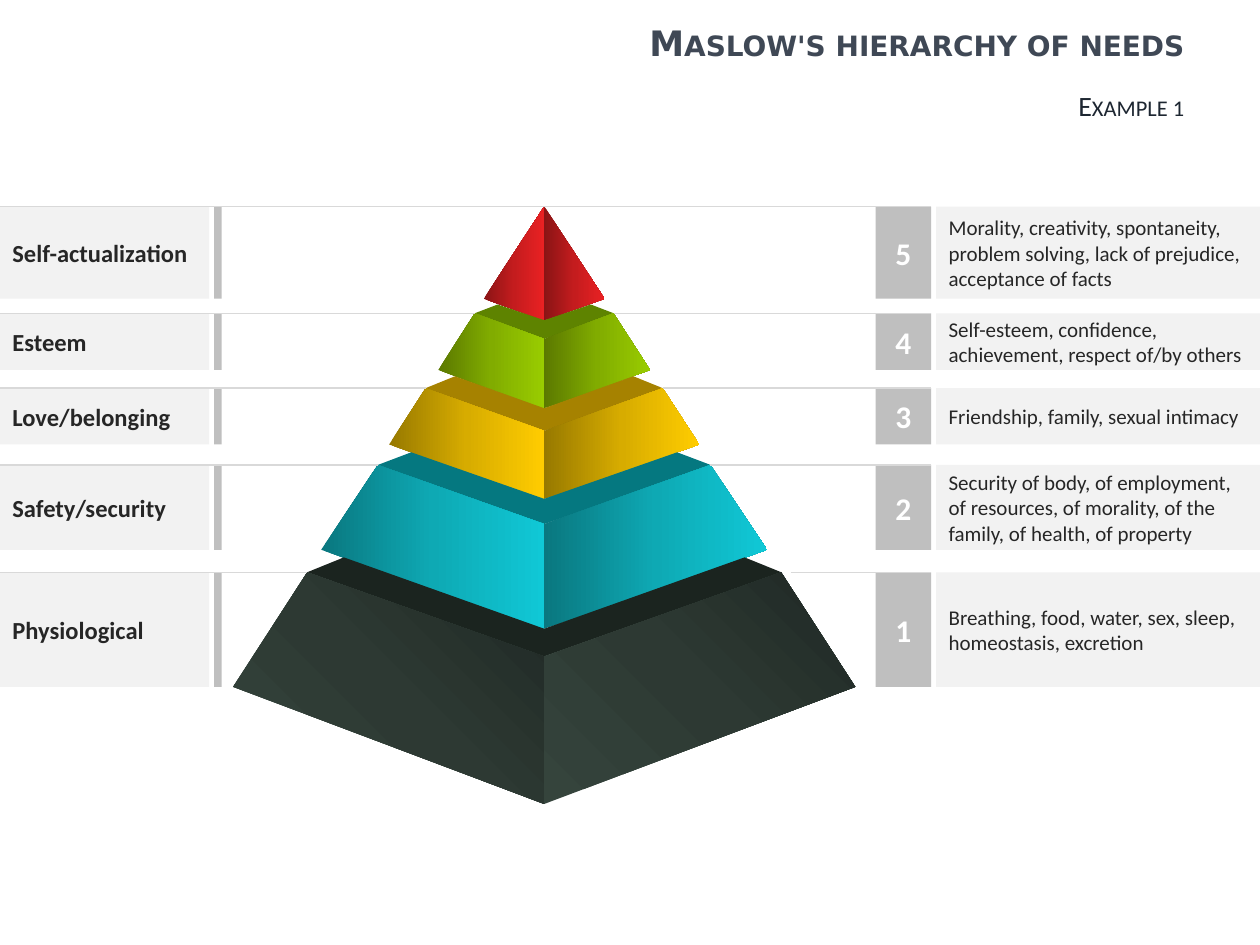
from lxml.etree import SubElement
from pptx import Presentation
from pptx.dml.color import RGBColor
from pptx.enum.shapes import MSO_CONNECTOR as Connector, MSO_SHAPE as Shape
from pptx.enum.text import MSO_ANCHOR as Anchor, MSO_AUTO_SIZE as AutoSize, PP_ALIGN as Align
from pptx.oxml import parse_xml
from pptx.oxml.ns import nsdecls, qn
from pptx.util import Pt

PANEL = RGBColor(0xF2, 0xF2, 0xF2)
ACCENT = RGBColor(0xBF, 0xBF, 0xBF)
RULE = RGBColor(0xD9, 0xD9, 0xD9)
INK = RGBColor(0x26, 0x26, 0x26)
WHITE = RGBColor(0xFF, 0xFF, 0xFF)
TITLE = RGBColor(0x3F, 0x48, 0x55)
SUBTITLE = RGBColor(0x1D, 0x26, 0x31)

RED = [RGBColor(0x8A, 0x14, 0x15), RGBColor(0xC4, 0x1C, 0x1E), RGBColor(0xE9, 0x21, 0x23)]
GREEN = [RGBColor(0x5B, 0x79, 0x00), RGBColor(0x81, 0xAC, 0x00), RGBColor(0x99, 0xCC, 0x00)]
YELLOW = [RGBColor(0x97, 0x79, 0x00), RGBColor(0xD7, 0xAC, 0x00), RGBColor(0xFF, 0xCC, 0x00)]
TEAL = [RGBColor(0x0A, 0x77, 0x7F), RGBColor(0x0E, 0xA9, 0xB4), RGBColor(0x10, 0xC8, 0xD6)]
SLATE = [RGBColor(0x35, 0x44, 0x3C), RGBColor(0x2D, 0x39, 0x33), RGBColor(0x1F, 0x28, 0x24)]
GREEN_LID = RGBColor(0x5E, 0x83, 0x00)
YELLOW_LID = RGBColor(0xA6, 0x82, 0x00)
TEAL_LID = RGBColor(0x05, 0x78, 0x80)
SLATE_LID = RGBColor(0x1B, 0x24, 0x1F)

CENTER = 311
LABEL_FORMAT = {"name": "Calibri", "size": Pt(14), "bold": True}
NUMBER_FORMAT = {"name": "Calibri", "size": Pt(18), "bold": True}
DETAIL_FORMAT = {"name": "Calibri", "size": Pt(12), "bold": False}

# name, details, upper corner, lower corner, front edge, lid corner, lid colour, face colours, angle
TIERS = [
    ("Self-actualization",
     "Morality, creativity, spontaneity, problem solving, lack of prejudice, acceptance of facts",
     (0, 118), (34.5, 170.7), (118, 183), None, None, RED, 0),
    ("Esteem", "Self-esteem, confidence, achievement, respect of/by others",
     (39.6, 179), (60.5, 211.4), (193.7, 233.3), (26.6, 174), GREEN_LID, GREEN, 0),
    ("Love/belonging", "Friendship, family, sexual intimacy",
     (67.7, 221.8), (88.6, 254), (246.2, 285.1), (51, 215), YELLOW_LID, YELLOW, 0),
    ("Safety/security",
     "Security of body, of employment, of resources, of morality, of the family, of health, of property",
     (95, 265.7), (127.4, 314.2), (299.5, 359.3), (76, 258.5), TEAL_LID, TEAL, 0),
    ("Physiological", "Breathing, food, water, sex, sleep, homeostasis, excretion",
     (135.4, 327), (177.8, 392.5), (375.1, 459.4), (114.5, 318.5), SLATE_LID, SLATE, 315),
]


def add_facet(group, side, corners):
    points = [(Pt(CENTER + side * x), Pt(y)) for x, y in corners]
    builder = group.shapes.build_freeform(*points[0], scale=1.0)
    builder.add_line_segments(points[1:], close=True)
    facet = builder.convert_to_shape()
    facet.shadow.inherit = False
    facet.line.fill.background()
    return facet


def add_panel(slide, left, width, top, bottom, color):
    panel = slide.shapes.add_shape(Shape.RECTANGLE, Pt(left), Pt(top), Pt(width), Pt(bottom - top))
    panel.shadow.inherit = False
    panel.fill.solid()
    panel.fill.fore_color.rgb = color
    panel.line.fill.background()
    return panel


deck = Presentation()
deck.slide_width, deck.slide_height = Pt(720), Pt(540)
page = deck.slides.add_slide(deck.slide_layouts[0])

headings = [
    (page.shapes.title, "Maslow's hierarchy of needs", 0, 49, TITLE,
     {"name": "DejaVu Sans", "size": Pt(20), "bold": True}),
    (page.placeholders[1], "Example 1", 49, 22.3, SUBTITLE,
     {"name": "Calibri", "size": Pt(16), "bold": False}),
]
for box, words, top, height, color, values in headings:
    box.left, box.top, box.width, box.height = Pt(229.7), Pt(top), Pt(454.3), Pt(height)
    frame = box.text_frame
    frame.auto_size = AutoSize.NONE
    frame.vertical_anchor = Anchor.MIDDLE
    para = frame.paragraphs[0]
    para.alignment = Align.RIGHT
    para.space_before = Pt(0)
    span = para.add_run()
    span.text = words
    for key, value in values.items():
        setattr(span.font, key, value)
    span.font.color.rgb = color
    span.font._element.set("cap", "small")

pyramid = page.shapes.add_group_shape()
back = 0
for name, details, upper, lower, front, lid, lid_color, face_colors, angle in TIERS:
    for side in (-1, 1):
        if lid:
            facet = add_facet(pyramid, side, [(0, back), lid, upper, (0, front[0])])
            facet.fill.solid()
            facet.fill.fore_color.rgb = lid_color
        face = [upper, lower, (0, front[1])]
        if lid:
            face.append((0, front[0]))
        facet = add_facet(pyramid, side, face)
        gradient = parse_xml(f'<a:gradFill {nsdecls("a")} rotWithShape="1"><a:gsLst/></a:gradFill>')
        for position, color in zip((0, 50000, 100000), face_colors):
            stop = SubElement(gradient[0], qn("a:gs"), pos=str(position))
            SubElement(stop, qn("a:srgbClr"), val=str(color))
        SubElement(gradient, qn("a:lin"), ang=str(angle * 60000), scaled="0")
        facet._element.spPr.find(qn("a:custGeom")).addnext(gradient)
    back = front[1]

for index, (name, details, upper, lower, *_) in enumerate(TIERS):
    half, top = upper
    bottom = lower[1]
    add_panel(page, 122.4, 4.3, top, bottom, ACCENT)
    texts = [
        (0, 119.5, PANEL, name, Align.LEFT, INK, LABEL_FORMAT),
        (500.4, 31.7, ACCENT, str(len(TIERS) - index), Align.CENTER, WHITE, NUMBER_FORMAT),
        (535, 185, PANEL, details, Align.LEFT, INK, DETAIL_FORMAT),
    ]
    for left, width, fill, words, alignment, color, values in texts:
        panel = add_panel(page, left, width, top, bottom, fill)
        frame = panel.text_frame
        frame.word_wrap = True
        frame.vertical_anchor = Anchor.MIDDLE
        para = frame.paragraphs[0]
        para.alignment = alignment
        span = para.add_run()
        span.text = words
        for key, value in values.items():
            setattr(span.font, key, value)
        span.font.color.rgb = color
    right_start = 452 if index == len(TIERS) - 1 else CENTER + half
    for start, end in ((CENTER - half, 0), (right_start, 532)):
        rule = page.shapes.add_connector(Connector.STRAIGHT, Pt(start), Pt(top), Pt(end), Pt(top))
        rule.line.color.rgb = RULE
        rule.line.width = Pt(0.75)
        SubElement(rule._element.spPr, qn("a:effectLst"))

deck.save("out.pptx")
